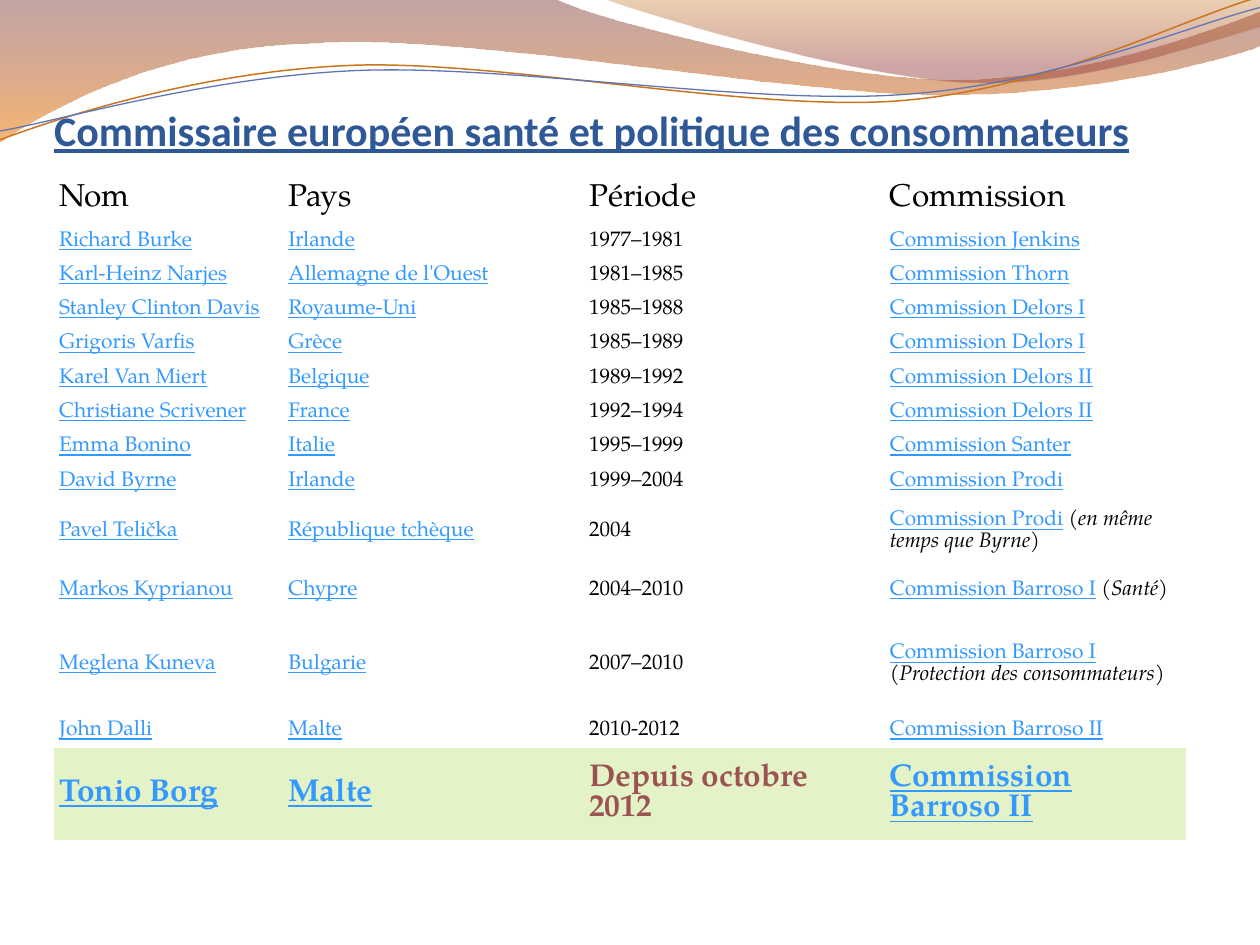
import math

import pptx
import pptx.dml.color
import pptx.enum.text
import pptx.oxml.ns
import pptx.util
from lxml import etree
from pptx.util import Inches

FONT = "TeX Gyre Pagella"
BLACK, LINK, TITLE, PALE, BROWN = "000000", "3399FF", "2F5897", "E3F2C7", "9C5252"
WAVE_TILT = 357.3
UNITS = 1000  # outline units per inch
NO_STYLE = "{2D5ABB26-0587-4C30-8999-92F81FD0307C}"

HEADER = ("Nom", "Pays", "Période", "Commission")
# Name, country, period, commission, optional italic note
COMMISSIONERS = [
    ("Richard Burke", "Irlande", "1977–1981", "Jenkins", ""),
    ("Karl-Heinz Narjes", "Allemagne de l'Ouest", "1981–1985", "Thorn", ""),
    ("Stanley Clinton Davis", "Royaume-Uni", "1985–1988", "Delors I", ""),
    ("Grigoris Varfis", "Grèce", "1985–1989", "Delors I", ""),
    ("Karel Van Miert", "Belgique", "1989–1992", "Delors II", ""),
    ("Christiane Scrivener", "France", "1992–1994", "Delors II", ""),
    ("Emma Bonino", "Italie", "1995–1999", "Santer", ""),
    ("David Byrne", "Irlande", "1999–2004", "Prodi", ""),
    ("Pavel Telička", "République tchèque", "2004", "Prodi", "en même temps que Byrne"),
    ("Markos Kyprianou", "Chypre", "2004–2010", "Barroso I", "Santé"),
    ("Meglena Kuneva", "Bulgarie", "2007–2010", "Barroso I", "Protection des consommateurs"),
    ("John Dalli", "Malte", "2010-2012", "Barroso II", ""),
    ("Tonio Borg", "Malte", "Depuis octobre 2012", "Barroso II", ""),
]
TABLE_WIDTH, TABLE_HEIGHT, NAME_WIDTH = 8.98, 5.28, 1.82
COL_WIDTHS = [NAME_WIDTH] + [(TABLE_WIDTH - NAME_WIDTH) / 3] * 3
# Rows that differ from the common height, which shares the remaining space
SPECIAL_ROWS = {0: 0.39, 9: 0.53, 10: 0.4, 11: 0.78, 13: 0.73}
ROW_COUNT = len(COMMISSIONERS) + 1
COMMON_ROW = (TABLE_HEIGHT - sum(SPECIAL_ROWS.values())) / (ROW_COUNT - len(SPECIAL_ROWS))

# Each outline: a start point, then points (2 numbers) or Bézier curves (6 numbers)
LEFT_BAND = [(0, 0), (4.4, -0.01), (4.76, 0.17, 6.64, 0.63, 7.58, 0.63),
             (8.53, 0.63, 9.58, 0.26, 10, 0.09), (10.01, 0.36),
             (9.83, 0.44, 8.7, 0.76, 7.46, 0.75), (6.22, 0.75, 3.82, 0.28, 2.57, 0.34),
             (1.29, 0.36, 0.46, 0.83, -0.01, 1.13)]
RIGHT_BAND = [(4.79, -0.01), (5.09, 0.11, 6.82, 0.62, 7.69, 0.65),
              (8.56, 0.69, 9.61, 0.32, 10, 0.21), (10, 0)]
ORANGE_WAVE = [(0, 1.11), (0.48, 0.93, 1.58, 0.57, 2.77, 0.52),
               (3.95, 0.47, 5.93, 0.89, 7.13, 0.8), (8.33, 0.71, 9.38, 0.15, 9.98, -0.02)]
BLUE_WAVE = [(0, 1.04), (0.47, 0.96, 1.64, 0.61, 2.83, 0.56),
             (4.03, 0.51, 5.97, 0.84, 7.17, 0.75), (8.36, 0.67, 9.41, 0.21, 10, 0.06)]


def rgb(value):
    return pptx.dml.color.RGBColor.from_string(value)


def rotate(outline, center, degrees):
    cos, sin = math.cos(math.radians(degrees)), math.sin(math.radians(degrees))
    cx, cy = center
    return [tuple(v for x, y in zip(part[::2], part[1::2])
                  for v in (cx + (x - cx) * cos - (y - cy) * sin,
                            cy + (x - cx) * sin + (y - cy) * cos)) for part in outline]


def add_outline(s, outline, close):
    """Build a freeform through the end points, then bend its curved segments."""
    parts = [[round(v * UNITS) for v in part] for part in outline]
    ends = [part[-2:] for part in parts]
    left, top = (min(axis) for axis in zip(*ends))
    builder = s.shapes.build_freeform(*ends[0], scale=Inches(1) / UNITS)
    builder.add_line_segments(ends[1:], close=close)
    shape = builder.convert_to_shape()
    shape.shadow.inherit = False
    qn = pptx.oxml.ns.qn
    lines = list(shape._element.spPr.iter(qn("a:lnTo")))
    for line, part in zip(lines, parts[1:]):
        if len(part) == 6:
            curve = etree.Element(qn("a:cubicBezTo"))
            for x, y in zip(part[::2], part[1::2]):
                etree.SubElement(curve, qn("a:pt"), x=str(x - left), y=str(y - top))
            line.getparent().replace(line, curve)
    return shape


def add_band(s, outline, stops):
    """Add a filled band; stops are (position, colour, opacity in percent)."""
    shape = add_outline(s, outline, close=True)
    shape.line.fill.background()
    shape.fill.gradient()
    shape.fill.gradient_angle = 270
    for stop, (position, color, opacity) in zip(shape.fill.gradient_stops, stops):
        stop.position = position
        stop.color.rgb = rgb(color)
    clrs = shape._element.spPr.iter(pptx.oxml.ns.qn("a:srgbClr"))
    for clr, (position, color, opacity) in zip(clrs, stops):
        etree.SubElement(clr, pptx.oxml.ns.qn("a:alpha"), val=str(opacity * 1000))


def add_wave(s, outline, center, color, width):
    shape = add_outline(s, rotate(outline, center, -WAVE_TILT), close=False)
    shape.rotation = WAVE_TILT
    shape.fill.background()
    shape.line.color.rgb = rgb(color)
    shape.line.width = pptx.util.Pt(width)


def style(font, size, color, name=FONT, bold=False, underline=False):
    font.name, font.size, font.bold = name, pptx.util.Pt(size), bold
    font.underline = underline
    font.color.rgb = rgb(color)


def add_title(s, text):
    tf = s.shapes.add_textbox(Inches(0.43), Inches(0.77), Inches(9.45), Inches(0.46)).text_frame
    tf.word_wrap = True
    tf.vertical_anchor = pptx.enum.text.MSO_ANCHOR.BOTTOM
    tf.margin_left = tf.margin_right = tf.margin_bottom = 0
    tf.margin_top = Inches(0.05)
    p = tf.paragraphs[0]
    p.text = text
    style(p.font, 24, TITLE, "Calibri", bold=True, underline=True)


def fill_cell(cell, text, size, color, bold=False, underline=False, note="", fill=None):
    cell.vertical_anchor = pptx.enum.text.MSO_ANCHOR.MIDDLE
    cell.margin_left, cell.margin_right = Inches(0.04), Inches(0.05)
    cell.margin_top = cell.margin_bottom = Inches(0.02)
    if fill:
        cell.fill.solid()
        cell.fill.fore_color.rgb = rgb(fill)
    else:
        cell.fill.background()
    p = cell.text_frame.paragraphs[0]
    if not note:
        p.text = text
        style(p.font, size, color, bold=bold, underline=underline)
        return
    r = p.add_run()
    r.text = text
    style(r.font, size, color, bold=bold, underline=underline)
    for part, italic in ((" (", False), (note, True), (")", False)):
        r = p.add_run()
        r.text = part
        style(r.font, size, BLACK)
        r.font.italic = italic


def add_commissioners(s):
    frame = s.shapes.add_table(ROW_COUNT, len(COL_WIDTHS), Inches(0.43), Inches(1.39),
                               Inches(TABLE_WIDTH), Inches(TABLE_HEIGHT))
    table = frame.table
    table.first_row = table.horz_banding = False
    next(frame._element.iter(pptx.oxml.ns.qn("a:tableStyleId"))).text = NO_STYLE
    for column, width in zip(table.columns, COL_WIDTHS):
        column.width = Inches(width)
    for i, row in enumerate(table.rows):
        row.height = Inches(SPECIAL_ROWS.get(i, COMMON_ROW))
    for c, text in enumerate(HEADER):
        fill_cell(table.cell(0, c), text, 18, BLACK)
    for i, (name, country, period, commission, note) in enumerate(COMMISSIONERS, 1):
        current = i == len(COMMISSIONERS)
        size, plain, fill = (18, BROWN, PALE) if current else (12, BLACK, None)
        for c, text in enumerate((name, country, period, "Commission " + commission)):
            is_link = c != 2
            fill_cell(table.cell(i, c), text, size, LINK if is_link else plain, bold=current,
                      underline=is_link, note=note if c == 3 else "", fill=fill)


def main():
    prs = pptx.Presentation()
    prs.slide_width, prs.slide_height = Inches(10), Inches(7.5)
    s = prs.slides.add_slide(prs.slide_layouts[6])
    # Decorative header
    add_band(s, LEFT_BAND, [(0, "793737", 45), (1, "F07800", 55)])
    add_band(s, RIGHT_BAND, [(0, "C06203", 30), (0.8, "973B3B", 45)])
    add_wave(s, ORANGE_WAVE, (4.99, 0.57), "CB741E", 0.85)
    add_wave(s, BLUE_WAVE, (5, 0.59), "6076B4", 0.75)
    # Content
    add_title(s, "Commissaire européen santé et politique des consommateurs")
    add_commissioners(s)
    prs.save("out.pptx")


if __name__ == "__main__":
    main()
